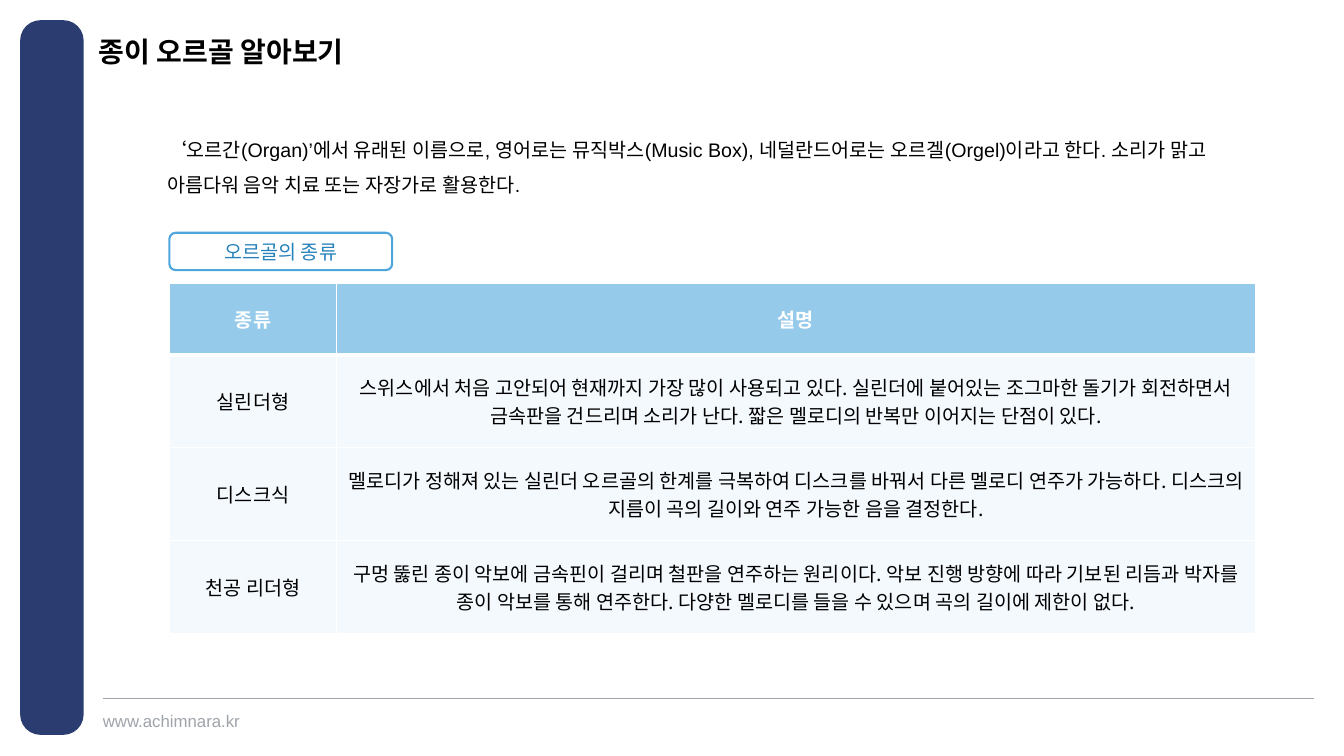
from dataclasses import dataclass

from lxml import etree
from pptx import Presentation
from pptx.dml.color import RGBColor
from pptx.enum.shapes import MSO_CONNECTOR, MSO_SHAPE
from pptx.enum.text import MSO_ANCHOR, MSO_AUTO_SIZE, PP_ALIGN
from pptx.oxml.ns import qn
from pptx.util import Inches, Pt


@dataclass(frozen=True)
class Theme:
    latin: str = "Arial"
    korean: str = "Noto Sans CJK KR"
    navy: str = "2B3C71"
    grey: str = "9EA4AA"
    sky: str = "95CAEA"
    pale: str = "F4F9FE"
    outline: str = "4EA6DC"
    accent: str = "2582BB"
    white: str = "FFFFFF"
    black: str = "000000"
    title_size: int = 20
    body_size: int = 14
    footer_size: int = 12


class SlideBuilder:
    def __init__(self, slide, theme):
        self.slide = slide
        self.theme = theme

    def set_text(self, frame, text, size, color, font=None, bold=False,
                 align=PP_ALIGN.LEFT, spacing=None):
        frame.text = text
        paragraph = frame.paragraphs[0]
        paragraph.alignment = align
        paragraph.space_before = Pt(0)
        if spacing:
            paragraph.line_spacing = spacing
        for run in paragraph.runs:
            run.font.name = font or self.theme.latin
            run.font.size = Pt(size)
            run.font.bold = bold
            run.font.color.rgb = RGBColor.from_string(color)
            east_asian = etree.Element(qn("a:ea"), typeface=self.theme.korean)
            run._r.get_or_add_rPr().find(qn("a:latin")).addnext(east_asian)

    def clear_margins(self, frame):
        frame.margin_left = frame.margin_right = Inches(0)
        frame.margin_top = frame.margin_bottom = Inches(0)

    def title(self, text, left, top, width, height):
        heading = self.slide.shapes.title
        heading.left, heading.top = Inches(left), Inches(top)
        heading.width, heading.height = Inches(width), Inches(height)
        frame = heading.text_frame
        self.clear_margins(frame)
        frame.auto_size = MSO_AUTO_SIZE.NONE
        frame.vertical_anchor = MSO_ANCHOR.MIDDLE
        self.set_text(frame, text, self.theme.title_size, self.theme.black,
                      bold=True, spacing=0.9)

    def text(self, text, left, top, width, height, size, color,
             spacing=None, margins=True):
        box = self.slide.shapes.add_textbox(
            Inches(left), Inches(top), Inches(width), Inches(height))
        box.text_frame.word_wrap = True
        if not margins:
            self.clear_margins(box.text_frame)
        self.set_text(box.text_frame, text, size, color, spacing=spacing)

    def rounded(self, left, top, width, height, fill, outline=None, radius=None):
        panel = self.slide.shapes.add_shape(
            MSO_SHAPE.ROUNDED_RECTANGLE,
            Inches(left), Inches(top), Inches(width), Inches(height))
        panel.shadow.inherit = False
        panel.fill.solid()
        panel.fill.fore_color.rgb = RGBColor.from_string(fill)
        if radius is not None:
            panel.adjustments[0] = radius
        if outline:
            panel.line.color.rgb = RGBColor.from_string(outline)
            panel.line.width = Pt(1.5)
        else:
            panel.line.fill.background()
        return panel

    def label(self, text, left, top, width, height):
        tag = self.rounded(left, top, width, height,
                           self.theme.white, self.theme.outline)
        tag.text_frame.vertical_anchor = MSO_ANCHOR.MIDDLE
        self.set_text(tag.text_frame, text, self.theme.body_size,
                      self.theme.accent, align=PP_ALIGN.CENTER)

    def rule(self, start, end, y):
        divider = self.slide.shapes.add_connector(
            MSO_CONNECTOR.STRAIGHT, Inches(start), Inches(y), Inches(end), Inches(y))
        divider.line.color.rgb = RGBColor.from_string(self.theme.grey)
        divider.line.width = Pt(0.5)
        etree.SubElement(divider._element.spPr, qn("a:effectLst"))

    def borders(self, cell, bottom):
        properties = cell._tc.get_or_add_tcPr()
        widths = {"a:lnL": 1, "a:lnR": 1, "a:lnT": 1, "a:lnB": bottom}
        for position, (side, points) in enumerate(widths.items()):
            edge = etree.Element(qn(side), w=str(Pt(points)))
            fill = etree.SubElement(edge, qn("a:solidFill"))
            etree.SubElement(fill, qn("a:srgbClr"), val=self.theme.white)
            properties.insert(position, edge)

    def table(self, rows, left, top, widths, heights):
        grid = self.slide.shapes.add_table(
            len(rows), len(widths), Inches(left), Inches(top),
            Inches(sum(widths)), Inches(sum(heights))).table
        for column, width in zip(grid.columns, widths):
            column.width = Inches(width)
        for r, (row, height) in enumerate(zip(rows, heights)):
            grid.rows[r].height = Inches(height)
            header = r == 0
            for c, text in enumerate(row):
                cell = grid.cell(r, c)
                cell.vertical_anchor = MSO_ANCHOR.MIDDLE
                cell.fill.solid()
                cell.fill.fore_color.rgb = RGBColor.from_string(
                    self.theme.sky if header else self.theme.pale)
                self.borders(cell, bottom=3 if header else 1)
                self.set_text(cell.text_frame, text, self.theme.body_size,
                              self.theme.white if header else self.theme.black,
                              font=self.theme.korean, bold=header,
                              align=PP_ALIGN.CENTER)


INTRO = ("‘오르간(Organ)’에서 유래된 이름으로, 영어로는 뮤직박스(Music Box), "
         "네덜란드어로는 오르겔(Orgel)이라고 한다. 소리가 맑고 아름다워 "
         "음악 치료 또는 자장가로 활용한다.")

ORGEL_TYPES = [
    ("종류", "설명"),
    ("실린더형",
     "스위스에서 처음 고안되어 현재까지 가장 많이 사용되고 있다. "
     "실린더에 붙어있는 조그마한 돌기가 회전하면서 금속판을 건드리며 "
     "소리가 난다. 짧은 멜로디의 반복만 이어지는 단점이 있다."),
    ("디스크식",
     "멜로디가 정해져 있는 실린더 오르골의 한계를 극복하여 디스크를 "
     "바꿔서 다른 멜로디 연주가 가능하다. 디스크의 지름이 곡의 길이와 "
     "연주 가능한 음을 결정한다."),
    ("천공 리더형",
     "구멍 뚫린 종이 악보에 금속핀이 걸리며 철판을 연주하는 원리이다. "
     "악보 진행 방향에 따라 기보된 리듬과 박자를 종이 악보를 통해 "
     "연주한다. 다양한 멜로디를 들을 수 있으며 곡의 길이에 제한이 없다."),
]


def main():
    deck = Presentation()
    deck.slide_width, deck.slide_height = Inches(13.33), Inches(7.5)
    theme = Theme()
    page = SlideBuilder(deck.slides.add_slide(deck.slide_layouts[5]), theme)

    # Side bar and footer
    page.rounded(0.2, 0.2, 0.63, 7.09, theme.navy, radius=0.32)
    page.rule(1.02, 13.03, 6.93)
    page.text("www.achimnara.kr", 1.02, 7.05, 1.5, 0.2,
              theme.footer_size, theme.grey, margins=False)

    # Title and introduction
    page.title("종이 오르골 알아보기", 0.98, 0.39, 7.87, 0.28)
    page.text(INTRO, 1.56, 1.2, 10.9, 0.76,
              theme.body_size, theme.black, spacing=1.5)

    # Kinds of music box
    page.table(ORGEL_TYPES, 1.68, 2.81, [1.66, 9.11], [0.71, 0.92, 0.92, 0.93])
    page.label("오르골의 종류", 1.68, 2.31, 2.21, 0.37)

    deck.save("out.pptx")


if __name__ == "__main__":
    main()
